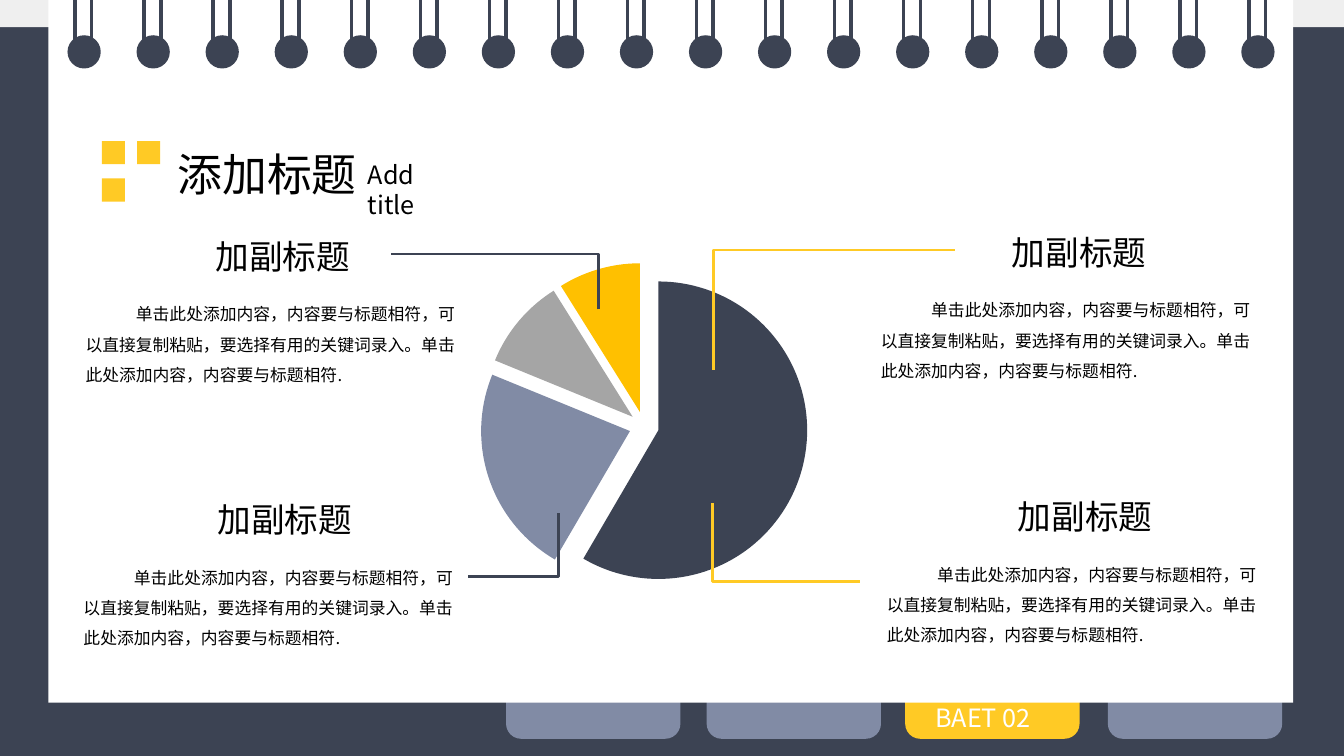
from dataclasses import dataclass

from lxml import etree
from pptx import Presentation
from pptx.chart.data import CategoryChartData
from pptx.dml.color import RGBColor
from pptx.enum.chart import XL_CHART_TYPE
from pptx.enum.shapes import MSO_CONNECTOR, MSO_SHAPE
from pptx.enum.text import MSO_ANCHOR, PP_ALIGN
from pptx.oxml.ns import qn
from pptx.shapes.autoshape import Shape
from pptx.slide import Slide
from pptx.text.text import TextFrame
from pptx.util import Inches, Length, Pt

RECT, ROUNDED, OVAL = MSO_SHAPE.RECTANGLE, MSO_SHAPE.ROUNDED_RECTANGLE, MSO_SHAPE.OVAL
STRAIGHT, ELBOW = MSO_CONNECTOR.STRAIGHT, MSO_CONNECTOR.ELBOW
LEFT, JUSTIFY = PP_ALIGN.LEFT, PP_ALIGN.JUSTIFY
TOP, MIDDLE = MSO_ANCHOR.TOP, MSO_ANCHOR.MIDDLE
PIE = XL_CHART_TYPE.PIE

SLIDE_WIDTH, SLIDE_HEIGHT = Inches(13.33), Inches(7.5)
COLUMNS, ROWS = 160, 90


@dataclass(frozen=True)
class Theme:
    navy: str = "3C4353"
    slate: str = "818BA5"
    grey: str = "A5A5A5"
    amber: str = "FFC000"
    yellow: str = "FFCA25"
    pale: str = "EFEFEF"
    white: str = "FFFFFF"
    black: str = "000000"
    font: str = "Noto Sans CJK SC"
    chart_font: str = "Calibri"
    title_size: int = 32
    heading_size: int = 24
    label_size: int = 18
    body_size: int = 12
    chart_size: int = 10
    post_width: float = 2.5
    leader_width: float = 2


THEME = Theme()


@dataclass(frozen=True)
class Box:
    """A rectangle in grid columns and rows."""
    column: float
    row: float
    columns: float
    rows: float

    def place(self) -> tuple[Length, Length, Length, Length]:
        return across(self.column), down(self.row), across(self.columns), down(self.rows)


@dataclass(frozen=True)
class Note:
    """A heading with its paragraph, and the leader from a slice to them."""
    heading_column: float
    heading_row: float
    body_column: float
    leader_start: tuple[float, float]
    leader_end: tuple[float, float]
    leader_color: str


@dataclass(frozen=True)
class Slice:
    category: str
    value: int
    color: str


HEADING = "加副标题"
BODY = ("单击此处添加内容，内容要与标题相符，可以直接复制粘贴，"
        "要选择有用的关键词录入。单击此处添加内容，内容要与标题相符.")
BODY_DROP = 6.94
NOTES = (
    Note(24.48, 27.48, 9, (71.28, 36.84), (46.56, 30.24), THEME.navy),
    Note(24.72, 58.8, 8.76, (66.48, 61.08), (55.68, 68.64), THEME.navy),
    Note(119.28, 27, 103.68, (84.96, 44.04), (113.64, 29.76), THEME.yellow),
    Note(120, 58.44, 104.4, (84.84, 59.88), (102.36, 69.24), THEME.yellow),
)
SLICES = (
    Slice("1", 59, THEME.navy),
    Slice("2", 23, THEME.slate),
    Slice("3", 10, THEME.grey),
    Slice("4", 9, THEME.amber),
)
EXPLOSION = 10
PLOT_SHARES = {"x": 0.2, "y": 0.05, "w": 0.6, "h": 0.9}
TABS = ((60.24, THEME.slate), (84.12, THEME.slate),
        (107.76, THEME.yellow), (131.88, THEME.slate))
RING_COUNT, RING_PITCH, RING_SIZE = 18, 8.22, 3.96
RING_COLUMN, RING_ROW = 8.04, 4.2
POST_OFFSETS, POST_END = (0.9, 2.88), 6.12
MARKERS = ((12.12, 16.8), (16.32, 16.8), (12.12, 21.24))
MARKER_SIZE = 2.76


def across(columns: float) -> Length:
    return Length(round(SLIDE_WIDTH * columns / COLUMNS))


def down(rows: float) -> Length:
    return Length(round(SLIDE_HEIGHT * rows / ROWS))


def rgb(color: str) -> RGBColor:
    return RGBColor.from_string(color)


def add_block(slide: Slide, kind: MSO_SHAPE, box: Box, color: str) -> Shape:
    block = slide.shapes.add_shape(kind, *box.place())
    block.shadow.inherit = False
    block.fill.solid()
    block.fill.fore_color.rgb = rgb(color)
    block.line.fill.background()
    return block


def add_line(slide: Slide, kind: MSO_CONNECTOR, start: tuple[float, float],
             end: tuple[float, float], color: str, width: float) -> None:
    line = slide.shapes.add_connector(
        kind, across(start[0]), down(start[1]), across(end[0]), down(end[1]))
    line.line.color.rgb = rgb(color)
    line.line.width = Pt(width)
    properties = line.element.spPr
    etree.SubElement(properties, qn("a:effectLst"))
    if kind == ELBOW:
        # The bend sits at the start, so the line runs upright first.
        adjustments = properties.find(qn("a:prstGeom")).get_or_add_avLst()
        etree.SubElement(adjustments, qn("a:gd"), name="adj1", fmla="val 0")


def write(frame: TextFrame, words: str, size: int, color: str = THEME.black,
          align: PP_ALIGN = JUSTIFY, anchor: MSO_ANCHOR = TOP) -> None:
    frame.word_wrap = True
    frame.vertical_anchor = anchor
    paragraph = frame.paragraphs[0]
    paragraph.alignment = align
    run = paragraph.add_run()
    run.text = words
    run.font.size = Pt(size)
    run.font.name = THEME.font
    run.font.color.rgb = rgb(color)
    etree.SubElement(run.font._element, qn("a:ea"), typeface=THEME.font)


def add_text(slide: Slide, box: Box, words: str, size: int, color: str = THEME.black,
             align: PP_ALIGN = JUSTIFY) -> TextFrame:
    frame = slide.shapes.add_textbox(*box.place()).text_frame
    write(frame, words, size, color, align)
    return frame


def add_notebook(slide: Slide) -> None:
    add_block(slide, RECT, Box(0, 0, COLUMNS, ROWS), THEME.navy)
    add_block(slide, RECT, Box(0, 0, COLUMNS, 3.24), THEME.pale)
    for column, color in TABS:
        add_block(slide, ROUNDED, Box(column, 77.16, 20.76, 10.8), color)
    add_text(slide, Box(110.16, 83.04, 15.96, 4.8), "BAET 02", THEME.label_size, THEME.white)
    add_block(slide, RECT, Box(5.76, 0, 148.2, 83.64), THEME.white)
    for ring in range(RING_COUNT):
        column = RING_COLUMN + ring * RING_PITCH
        add_block(slide, OVAL, Box(column, RING_ROW, RING_SIZE, RING_SIZE), THEME.navy)
        for offset in POST_OFFSETS:
            post = column + offset
            add_line(slide, STRAIGHT, (post, 0), (post, POST_END), THEME.navy, THEME.post_width)


def add_heading(slide: Slide) -> None:
    for column, row in MARKERS:
        add_block(slide, RECT, Box(column, row, MARKER_SIZE, MARKER_SIZE), THEME.yellow)
    title = slide.shapes.title
    title.left, title.top, title.width, title.height = Box(19.92, 16.8, 26.52, 7.68).place()
    write(title.text_frame, "添加标题", THEME.title_size, align=LEFT, anchor=MIDDLE)
    title.element.getparent().append(title.element)  # in front of the page
    add_text(slide, Box(42.6, 18.36, 13.2, 4.8), "Add title", THEME.label_size)


def add_pie(slide: Slide) -> None:
    data = CategoryChartData()
    data.categories = [part.category for part in SLICES]
    data.add_series("Series 1", [part.value for part in SLICES])
    box = Box(47.04, 31.08, 59.28, 39.36)
    chart = slide.shapes.add_chart(PIE, *box.place(), data).chart
    chart.has_title = chart.has_legend = False
    chart.font.name = THEME.chart_font
    chart.font.size = Pt(THEME.chart_size)
    chart.font.color.rgb = rgb(THEME.black)
    plot = chart.plots[0]
    plot.vary_by_categories = True
    series = plot.series[0]
    for index, part in enumerate(SLICES):
        look = series.points[index].format
        look.fill.solid()
        look.fill.fore_color.rgb = rgb(part.color)
        look.line.fill.background()
    for fill in series._element.findall(f"{qn('c:dPt')}/{qn('c:spPr')}"):
        fill.addprevious(etree.Element(qn("c:explosion"), val=str(EXPLOSION)))
    area = plot._element.getparent()
    for old in area.findall(qn("c:layout")):
        area.remove(old)
    layout = etree.Element(qn("c:layout"))
    area.insert(0, layout)
    manual = etree.SubElement(layout, qn("c:manualLayout"))
    etree.SubElement(manual, qn("c:layoutTarget"), val="inner")
    for side in ("x", "y"):
        etree.SubElement(manual, qn(f"c:{side}Mode"), val="edge")
    for side, share in PLOT_SHARES.items():
        etree.SubElement(manual, qn(f"c:{side}"), val=str(share))


def add_note(slide: Slide, note: Note) -> None:
    add_line(slide, ELBOW, note.leader_start, note.leader_end,
             note.leader_color, THEME.leader_width)
    add_text(slide, Box(note.heading_column, note.heading_row, 21.48, 6),
             HEADING, THEME.heading_size)
    body = add_text(slide, Box(note.body_column, note.heading_row + BODY_DROP, 46.8, 11.76),
                    BODY, THEME.body_size, align=LEFT).paragraphs[0]
    body.line_spacing = 1.5
    body._p.get_or_add_pPr().set("indent", str(Inches(0.5)))


def main() -> None:
    deck = Presentation()
    deck.slide_width, deck.slide_height = SLIDE_WIDTH, SLIDE_HEIGHT
    slide = deck.slides.add_slide(deck.slide_layouts[5])
    add_notebook(slide)
    add_heading(slide)
    add_pie(slide)
    for note in NOTES:
        add_note(slide, note)
    deck.save("out.pptx")


if __name__ == "__main__":
    main()
